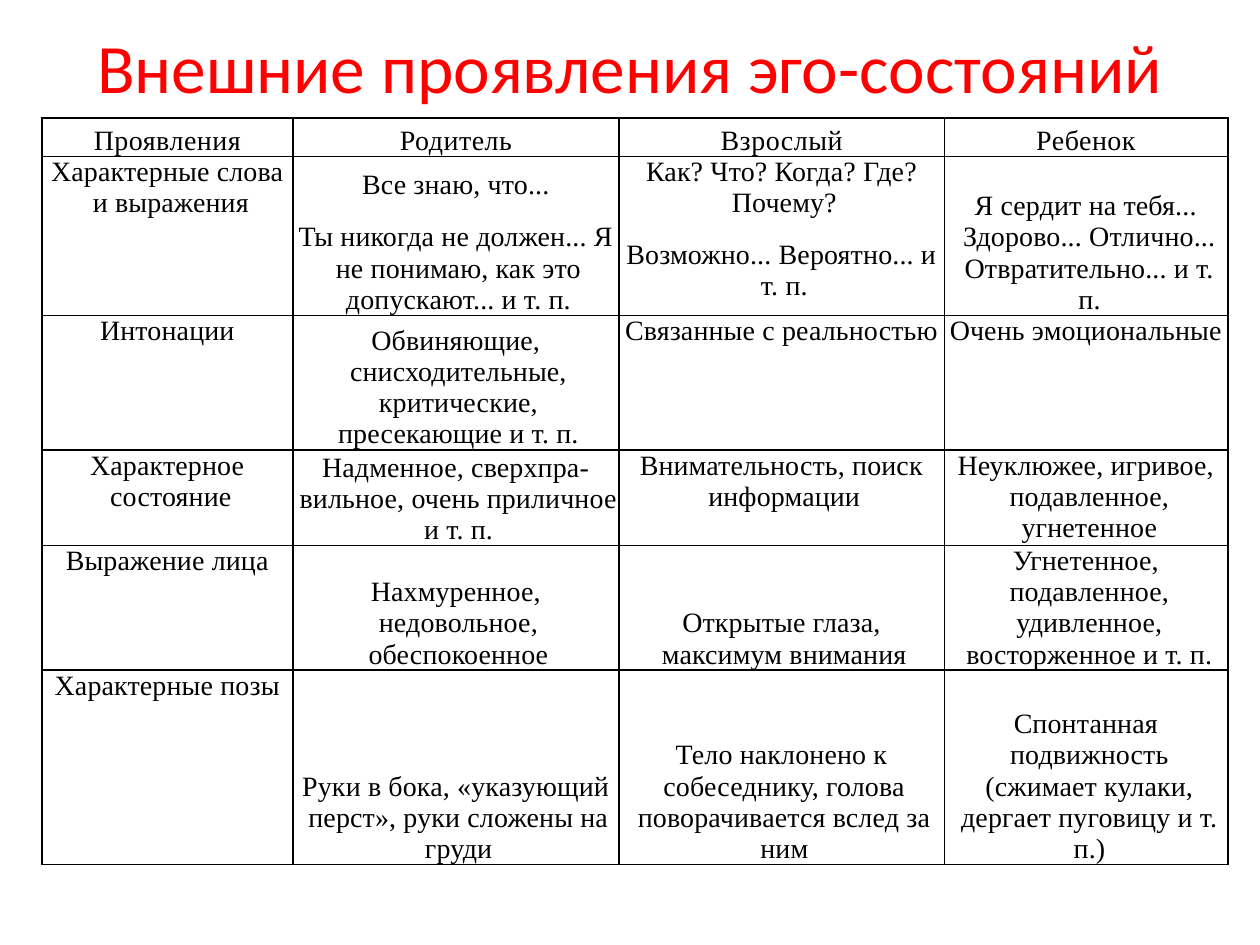
from lxml import etree
from pptx import Presentation, util as u
from pptx.dml.color import RGBColor
from pptx.enum import text
from pptx.oxml.ns import qn

RED = RGBColor(0xFF, 0x00, 0x00)
BLACK = RGBColor(0x00, 0x00, 0x00)
WHITE = RGBColor(0xFF, 0xFF, 0xFF)

TITLE = "Внешние проявления эго-состояний"
COLUMN_WIDTHS = [143.3, 186.5, 185.8, 162]
ROW_HEIGHTS = [22, 90.7, 77, 54.7, 71, 111]
COLUMN_INDENTS = [4, 3, 3, 4]

# One letter per cell: t = text at the top, b = at the bottom
ROWS = [
    ("bbbb", ["Проявления", "Родитель", "Взрослый", "Ребенок"]),
    ("tbtb", [
        "Характерные слова и выражения",
        "Все знаю, что...\n"
        "Ты никогда не должен... Я не понимаю, как это допускают... и т. п.",
        "Как? Что? Когда? Где? Почему?\nВозможно... Вероятно... и т. п.",
        "Я сердит на тебя... Здорово... Отлично... Отвратительно... и т. п."]),
    ("tbtt", [
        "Интонации",
        "Обвиняющие, снисходительные, критические, пресекающие и т. п.",
        "Связанные с реальностью",
        "Очень эмоциональные"]),
    ("tbtt", [
        "Характерное состояние",
        "Надменное, сверхпра- вильное, очень приличное и т. п.",
        "Внимательность, поиск информации",
        "Неуклюжее, игривое, подавленное, угнетенное"]),
    ("tbbb", [
        "Выражение лица",
        "Нахмуренное, недовольное, обеспокоенное",
        "Открытые глаза, максимум внимания",
        "Угнетенное, подавленное, удивленное, восторженное и т. п."]),
    ("tbbb", [
        "Характерные позы",
        "Руки в бока, «указующий перст», руки сложены на груди",
        "Тело наклонено к собеседнику, голова поворачивается вслед за ним",
        "Спонтанная подвижность (сжимает кулаки, дергает пуговицу и т. п.)"]),
]
ANCHORS = {"t": text.MSO_ANCHOR.TOP, "b": text.MSO_ANCHOR.BOTTOM}


class SlideBuilder:
    title_font, title_size = "Calibri", 39.6
    table_font, table_size = "Times New Roman", 16
    hanging, paragraph_gap, border = 15, 12, 1

    def __init__(self, slide):
        self.slide = slide

    def add_run(self, paragraph, wording, font, size, color):
        run = paragraph.add_run()
        run.text = wording
        run.font.name, run.font.size = font, u.Pt(size)
        run.font.color.rgb = color
        return run

    def title(self, wording, left, top, width, height):
        heading = self.slide.shapes.title
        heading.left, heading.top = u.Pt(left), u.Pt(top)
        heading.width, heading.height = u.Pt(width), u.Pt(height)
        frame = heading.text_frame
        frame.vertical_anchor = text.MSO_ANCHOR.MIDDLE
        frame.auto_size = text.MSO_AUTO_SIZE.NONE
        paragraph = frame.paragraphs[0]
        paragraph.alignment = text.PP_ALIGN.CENTER
        self.add_run(paragraph, wording, self.title_font, self.title_size, RED)

    def table(self, rows, left, top, widths, heights):
        grid = self.slide.shapes.add_table(
            len(rows), len(widths), u.Pt(left), u.Pt(top),
            u.Pt(sum(widths)), u.Pt(sum(heights))).table
        for column, width in zip(grid.columns, widths):
            column.width = u.Pt(width)
        for row, height in zip(grid.rows, heights):
            row.height = u.Pt(height)
        for r, (anchors, wordings) in enumerate(rows):
            for c, (anchor, wording) in enumerate(zip(anchors, wordings)):
                indent, tracking = (COLUMN_INDENTS[c], 0.1) if r else (0, 0.3)
                self.cell(grid.cell(r, c), wording, ANCHORS[anchor], indent, tracking)

    def cell(self, cell, wording, anchor, indent, tracking):
        cell.margin_left = cell.margin_right = u.Pt(0.7)
        cell.margin_top = cell.margin_bottom = 0
        cell.vertical_anchor = anchor
        self.cell_borders(cell)
        cell.fill.solid()
        cell.fill.fore_color.rgb = WHITE
        frame = cell.text_frame
        for i, line in enumerate(wording.split("\n")):
            paragraph = frame.add_paragraph() if i else frame.paragraphs[0]
            paragraph.alignment = text.PP_ALIGN.CENTER
            paragraph.space_before = u.Pt(self.paragraph_gap)
            properties = paragraph._p.get_or_add_pPr()
            properties.set("marL", str(u.Pt(indent)))
            properties.set("indent", str(-u.Pt(self.hanging)))
            run = self.add_run(paragraph, line, self.table_font, self.table_size, BLACK)
            run._r.get_or_add_rPr().set("spc", str(round(tracking * 100)))

    def cell_borders(self, cell):
        properties = cell._tc.get_or_add_tcPr()
        for side in ("a:lnL", "a:lnR", "a:lnT", "a:lnB"):
            line = etree.SubElement(properties, qn(side), w=str(u.Pt(self.border)))
            fill = etree.SubElement(line, qn("a:solidFill"))
            etree.SubElement(fill, qn("a:srgbClr"), val=str(BLACK))


def main():
    deck = Presentation()
    deck.slide_width, deck.slide_height = u.Pt(720), u.Pt(540)
    builder = SlideBuilder(deck.slides.add_slide(deck.slide_layouts[5]))
    builder.title(TITLE, 36, 21.6, 648, 32.4)
    builder.table(ROWS, 24, 67.5, COLUMN_WIDTHS, ROW_HEIGHTS)
    deck.save("out.pptx")


if __name__ == "__main__":
    main()
